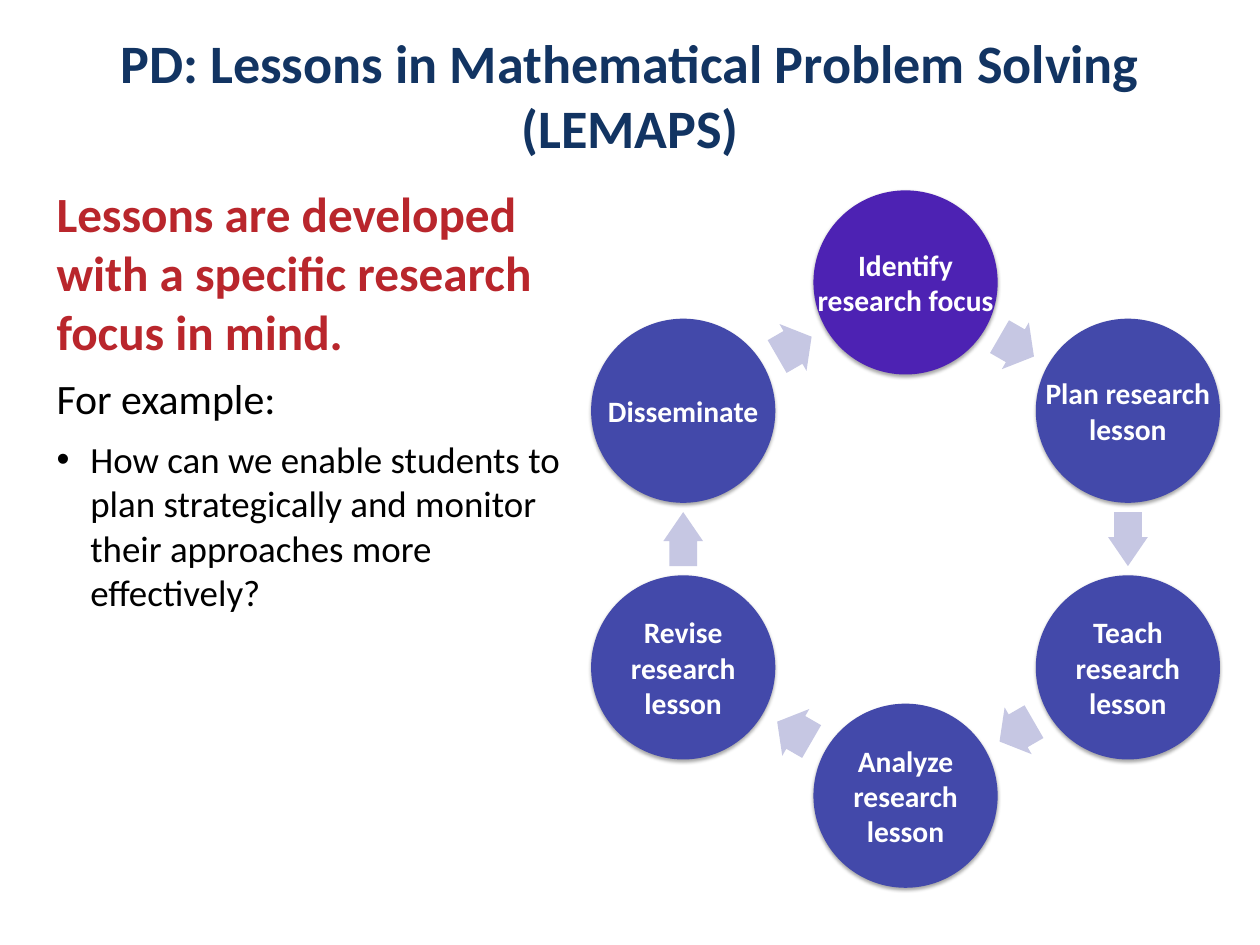
import math

from lxml import etree
from pptx import Presentation
from pptx.dml.color import RGBColor
from pptx.enum.shapes import MSO_SHAPE
from pptx.enum.text import MSO_ANCHOR, MSO_AUTO_SIZE, PP_ALIGN
from pptx.oxml.ns import qn
from pptx.util import Cm, Pt

OVAL, ARROW = MSO_SHAPE.OVAL, MSO_SHAPE.RIGHT_ARROW
TOP, MIDDLE = MSO_ANCHOR.TOP, MSO_ANCHOR.MIDDLE
LEFT, CENTER = PP_ALIGN.LEFT, PP_ALIGN.CENTER
NO_AUTOFIT = MSO_AUTO_SIZE.NONE

NAVY = RGBColor(0x12, 0x34, 0x62)
RED = RGBColor(0xB9, 0x26, 0x2C)
BLACK = RGBColor(0x00, 0x00, 0x00)
WHITE = RGBColor(0xFF, 0xFF, 0xFF)
PURPLE = RGBColor(0x4D, 0x22, 0xB3)
INDIGO = RGBColor(0x43, 0x49, 0xAA)
LAVENDER = RGBColor(0xC6, 0xC7, 0xE3)

# Each stage is a list of the lines shown in its circle.
STAGES = [
    ["Identify", "research focus"],
    ["Plan research", "lesson"],
    ["Teach", "research", "lesson"],
    ["Analyze", "research", "lesson"],
    ["Revise", "research", "lesson"],
    ["Disseminate"],
]
CYCLE_X, CYCLE_Y, CYCLE_RADIUS = 25.96, 15.46, 7.36


class SlideBuilder:
    font = "Calibri"
    inset = Cm(0.1)
    diameter = 5.28

    def __init__(self, slide):
        self.slide = slide

    def frame(self, sp, anchor, wrap=True):
        tf = sp.text_frame
        tf.margin_left = tf.margin_right = self.inset
        tf.margin_top = tf.margin_bottom = self.inset
        tf.vertical_anchor = anchor
        tf.auto_size = NO_AUTOFIT
        tf.word_wrap = wrap
        return tf

    def run(self, p, text, size, color, bold=False):
        r = p.add_run()
        r.text = text
        r.font.name, r.font.size, r.font.bold = self.font, Pt(size), bold
        r.font.color.rgb = color

    def placeholder(self, idx, box, anchor):
        sp = self.slide.placeholders[idx]
        sp.left, sp.top, sp.width, sp.height = map(Cm, box)
        return self.frame(sp, anchor)

    def title(self, text, box):
        p = self.placeholder(0, box, MIDDLE).paragraphs[0]
        p.alignment = CENTER
        self.run(p, text, 44, NAVY, True)

    def body(self, items, box):
        """Fill the body with (text, level, size, color, bold, space before, bulleted)."""
        tf = self.placeholder(1, box, TOP)
        for i, (text, level, size, color, bold, before, bulleted) in enumerate(items):
            p = tf.add_paragraph() if i else tf.paragraphs[0]
            p.alignment, p.level, p.space_before = LEFT, level, Pt(before)
            pPr = p._p.get_or_add_pPr()
            indent = Cm(0.97) if bulleted else 0
            pPr.set("marL", str(indent))
            pPr.set("indent", str(-indent))
            if bulleted:
                etree.SubElement(pPr, qn("a:buChar")).set("char", "•")
            else:
                etree.SubElement(pPr, qn("a:buNone"))
            self.run(p, text, size, color, bold)

    def shape(self, kind, x, y, width, height, fill):
        """Add a plain filled shape centred on (x, y)."""
        sp = self.slide.shapes.add_shape(
            kind, Cm(x - width / 2), Cm(y - height / 2), Cm(width), Cm(height))
        sp.fill.solid()
        sp.fill.fore_color.rgb = fill
        sp.line.fill.background()
        sp.shadow.inherit = False
        return sp

    def soft_shadow(self, sp):
        effects = sp._element.spPr.find(qn("a:effectLst"))
        shadow = etree.SubElement(effects, qn("a:outerShdw"), blurRad=str(Pt(3)),
                                  dist=str(Pt(1.8)), dir="5400000", rotWithShape="0")
        color = etree.SubElement(shadow, qn("a:srgbClr"), val=str(BLACK))
        etree.SubElement(color, qn("a:alpha"), val="35000")

    def stage(self, lines, x, y, fill):
        sp = self.shape(OVAL, x, y, self.diameter, self.diameter, fill)
        self.soft_shadow(sp)
        p = self.frame(sp, MIDDLE, wrap=False).paragraphs[0]
        p.alignment = CENTER
        for i, line in enumerate(lines):
            if i:
                p.add_line_break()
            self.run(p, line, 24, WHITE, True)

    def arrow(self, x, y, rotation):
        upright = rotation % 180 == 90
        length, width, head = (1.55, 1.14, 0.73) if upright else (1.14, 1.55, 0.54)
        sp = self.shape(ARROW, x, y, length, width, LAVENDER)
        sp.adjustments[0], sp.adjustments[1] = 0.7, head
        sp.rotation = rotation


def on_cycle(radius, degrees):
    """Return the point at a clockwise angle from the top of the cycle."""
    a = math.radians(degrees)
    return CYCLE_X + radius * math.sin(a), CYCLE_Y - radius * math.cos(a)


def main():
    prs = Presentation()
    prs.slide_width, prs.slide_height = Cm(36.12), Cm(27.1)
    s = SlideBuilder(prs.slides.add_slide(prs.slide_layouts[1]))

    s.title("PD: Lessons in Mathematical Problem Solving (LEMAPS)",
            (1.8, 0.48, 32.54, 4.47))
    s.body([
        ("Lessons are developed with a specific research focus in mind.",
         0, 40, RED, True, 11, False),
        ("For example:", 1, 34, BLACK, False, 10, False),
        ("How can we enable students to plan strategically and monitor "
         "their approaches more effectively?", 0, 30, BLACK, False, 11, True),
    ], (1.52, 5.16, 14.88, 20.02))

    step = 360 / len(STAGES)
    arrow_radius = CYCLE_RADIUS * math.cos(math.radians(step / 2))
    for i, lines in enumerate(STAGES):
        angle = i * step
        s.stage(lines, *on_cycle(CYCLE_RADIUS, angle), INDIGO if i else PURPLE)
        s.arrow(*on_cycle(arrow_radius, angle + step / 2), angle + step / 2)

    prs.save("out.pptx")


if __name__ == "__main__":
    main()
